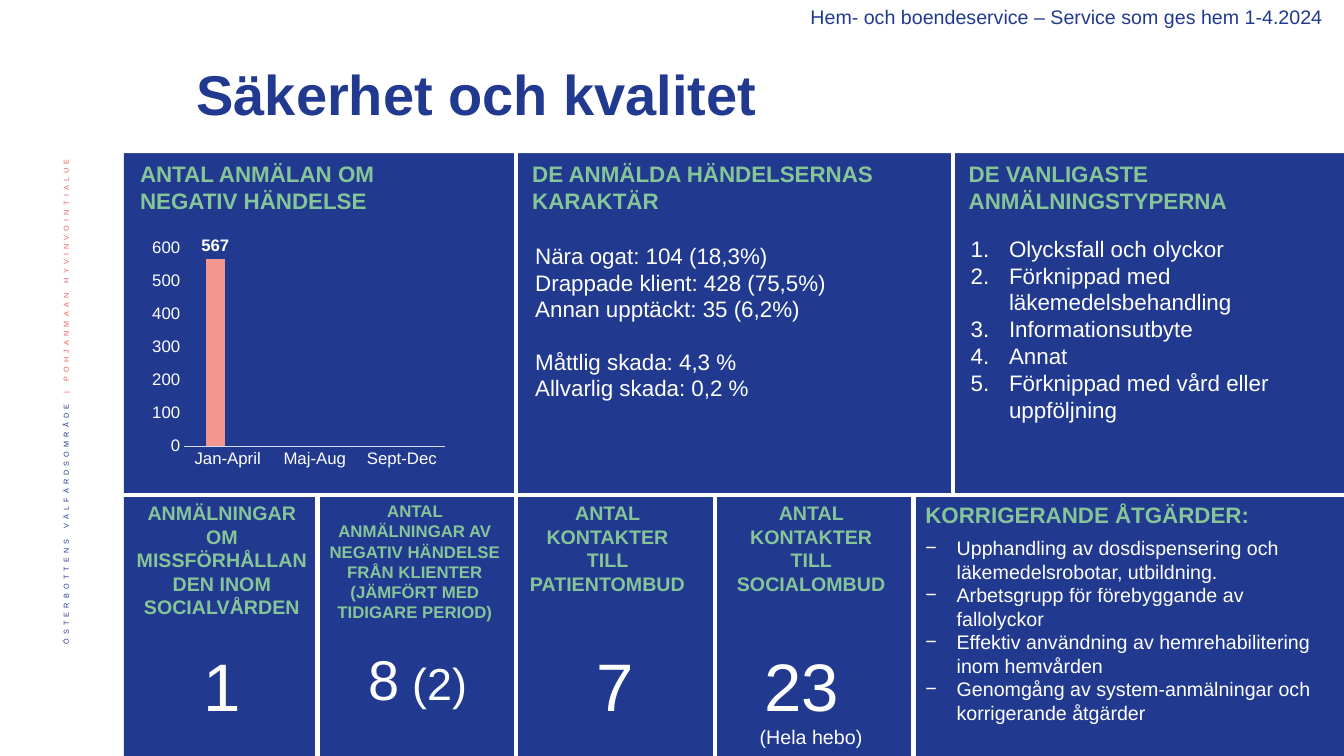
from dataclasses import dataclass

from lxml.etree import SubElement
from pptx import Presentation
from pptx.chart.data import CategoryChartData
from pptx.dml.color import RGBColor
from pptx.enum.chart import XL_CHART_TYPE as ChartType
from pptx.enum.chart import XL_LABEL_POSITION as LabelPosition
from pptx.enum.chart import XL_TICK_MARK as TickMark
from pptx.enum.shapes import MSO_CONNECTOR as Connector
from pptx.enum.shapes import MSO_SHAPE as Shape
from pptx.enum.text import MSO_ANCHOR as Anchor
from pptx.enum.text import MSO_AUTO_SIZE as AutoSize
from pptx.enum.text import PP_ALIGN as Align
from pptx.oxml.ns import qn
from pptx.slide import Slide
from pptx.util import Inches, Pt

BLUE = RGBColor(0x21, 0x3A, 0x8F)
GREEN = RGBColor(0x85, 0xC5, 0x98)
WHITE = RGBColor(0xFF, 0xFF, 0xFF)
CORAL = RGBColor(0xEB, 0x5C, 0x5F)
SALMON = RGBColor(0xF3, 0x96, 0x90)
PALE = RGBColor(0xD6, 0xDD, 0xF6)
WIDTH, HEIGHT = 13.33, 7.5
PANEL_LEFT, DIVIDER = 1.23, 4.91
COLUMNS = [3.15 + 1.97 * index for index in range(4)]


@dataclass(frozen=True)
class Span:
    text: str
    size: float
    color: RGBColor = WHITE
    bold: bool = False


@dataclass(frozen=True)
class Block:
    left: float
    top: float
    width: float
    height: float
    paras: list[list[Span]]
    align: Align = Align.LEFT
    bullet: str = ""
    indent: float = 0
    anchor: Anchor = Anchor.TOP
    spacing: float = 1.0
    vertical: bool = False


@dataclass(frozen=True)
class Rule:
    x1: float
    y1: float
    x2: float
    y2: float


@dataclass(frozen=True)
class Panel:
    left: float
    top: float
    width: float
    height: float
    color: RGBColor


def lines(size: float, *texts: str) -> list[list[Span]]:
    return [[Span(text, size)] for text in texts]


def heading(text: str, size: float = 16) -> list[list[Span]]:
    return [[Span(text, size, GREEN, True)]]


def apply(target, values: dict) -> None:
    for name, value in values.items():
        setattr(target, name, value)


def style(font, size: float, color: RGBColor, bold: bool = False) -> None:
    apply(font, {"name": "Arial", "size": Pt(size), "bold": bold})
    font.color.rgb = color


def add_panel(page: Slide, panel: Panel) -> None:
    shape = page.shapes.add_shape(Shape.RECTANGLE, Inches(panel.left), Inches(panel.top),
                                  Inches(panel.width), Inches(panel.height))
    shape.shadow.inherit = False
    shape.fill.solid()
    shape.fill.fore_color.rgb = panel.color
    shape.line.fill.background()


def add_rule(page: Slide, rule: Rule) -> None:
    line = page.shapes.add_connector(Connector.STRAIGHT, Inches(rule.x1), Inches(rule.y1),
                                     Inches(rule.x2), Inches(rule.y2))
    line.line.color.rgb = WHITE
    line.line.width = Pt(3)
    SubElement(line._element.spPr, qn("a:effectLst"))


def add_bullet(para, bullet: str, indent: float) -> None:
    properties = para._p.get_or_add_pPr()
    properties.set("marL", str(Inches(indent)))
    properties.set("indent", str(-Inches(indent)))
    if bullet == "1.":
        SubElement(properties, qn("a:buAutoNum"), type="arabicPeriod")
    else:
        SubElement(properties, qn("a:buFont"), typeface="Arial")
        SubElement(properties, qn("a:buChar"), char=bullet)


def add_block(page: Slide, block: Block) -> None:
    box = page.shapes.add_textbox(Inches(block.left), Inches(block.top),
                                  Inches(block.width), Inches(block.height))
    frame = box.text_frame
    fixed = block.anchor == Anchor.MIDDLE
    apply(frame, {"word_wrap": True, "vertical_anchor": block.anchor,
                  "auto_size": AutoSize.NONE if fixed else AutoSize.SHAPE_TO_FIT_TEXT})
    if block.vertical:
        frame._txBody.bodyPr.set("vert", "vert270")
    for index, spans in enumerate(block.paras):
        para = frame.add_paragraph() if index else frame.paragraphs[0]
        apply(para, {"alignment": block.align, "line_spacing": block.spacing})
        if block.bullet:
            add_bullet(para, block.bullet, block.indent)
        for span in spans:
            run = para.add_run()
            run.text = span.text
            style(run.font, span.size, span.color, span.bold)
            if block.vertical:
                run.font._element.set("baseline", "30000")
                run.font._element.set("spc", "300")


def add_report_chart(page: Slide) -> None:
    data = CategoryChartData()
    data.categories = ["Jan-April", "Maj-Aug", "Sept-Dec"]
    data.add_series("Series 1", [567, None, None])
    data.add_series("Series 2", [None, None, None])
    chart = page.shapes.add_chart(ChartType.COLUMN_CLUSTERED, Inches(1.34), Inches(2.35),
                                  Inches(3.16), Inches(2.52), data).chart
    apply(chart, {"has_legend": False, "has_title": False})
    style(chart.font, 10, BLUE)
    for axis in (chart.category_axis, chart.value_axis):
        apply(axis, {"major_tick_mark": TickMark.NONE, "minor_tick_mark": TickMark.NONE,
                     "has_major_gridlines": False})
        style(axis.tick_labels.font, 12, WHITE)
    apply(chart.value_axis, {"minimum_scale": 0, "maximum_scale": 600, "major_unit": 100})
    chart.value_axis.format.line.fill.background()
    chart.category_axis.format.line.color.rgb = PALE
    chart.category_axis.format.line.width = Pt(0.75)
    plot = chart.plots[0]
    apply(plot, {"gap_width": 219, "overlap": -27, "vary_by_categories": False})
    for series, color in zip(plot.series, (SALMON, CORAL)):
        series.format.fill.solid()
        series.format.fill.fore_color.rgb = color
        apply(series.data_labels, {"show_value": True, "position": LabelPosition.OUTSIDE_END})
        style(series.data_labels.font, 12, WHITE, True)
    area = chart._chartSpace.chart.plotArea
    for old in area.findall(qn("c:layout")):
        area.remove(old)
    layout = SubElement(area, qn("c:layout"))
    area.insert(0, layout)
    manual = SubElement(layout, qn("c:manualLayout"))
    for name, value in {"layoutTarget": "inner", "xMode": "edge", "yMode": "edge",
                        "x": "0.154", "y": "0.037", "w": "0.82", "h": "0.786"}.items():
        SubElement(manual, qn(f"c:{name}"), val=value)


PANELS = [Panel(PANEL_LEFT, 0, WIDTH - PANEL_LEFT, HEIGHT, BLUE),
          Panel(1.15, 0, WIDTH - 1.15, 1.52, WHITE)]
RULES = [Rule(PANEL_LEFT, DIVIDER, WIDTH, DIVIDER),
         *[Rule(x, DIVIDER, x, HEIGHT) for x in COLUMNS],
         *[Rule(x, 1.42, x, DIVIDER) for x in (COLUMNS[1], 9.45)]]
BLOCKS = [
    Block(0.42, 1.42, 0.52, 5.73, [[Span("ÖSTERBOTTENS VÄLFÄRDSOMRÅDE ", 9, BLUE),
                                    Span("| POHJANMAAN HYVINVOINTIALUE ", 9, CORAL)]],
          Align.RIGHT, anchor=Anchor.MIDDLE, spacing=0.9, vertical=True),
    Block(7.36, 0, 5.86, 0.34,
          [[Span("Hem- och boendeservice – Service som ges hem 1-4.2024", 14, BLUE)]], Align.RIGHT),
    Block(1.85, 0.47, 9.98, 0.99, [[Span("Säkerhet och kvalitet", 40, BLUE, True)]],
          anchor=Anchor.MIDDLE, spacing=0.9),
    Block(1.29, 1.54, 3.11, 0.64, heading("ANTAL ANMÄLAN OM NEGATIV HÄNDELSE")),
    Block(5.18, 1.54, 4.18, 0.64, heading("DE ANMÄLDA HÄNDELSERNAS KARAKTÄR")),
    Block(5.21, 2.35, 3.89, 0.91, lines(16, "Nära ogat: 104 (18,3%)", "Drappade klient: 428 (75,5%)",
                                        "Annan upptäckt: 35 (6,2%)")),
    Block(5.21, 3.4, 3.16, 0.64, lines(16, "Måttlig skada: 4,3 %", "Allvarlig skada: 0,2 %")),
    Block(9.51, 1.54, 3.57, 0.64, heading("DE VANLIGASTE ANMÄLNINGSTYPERNA")),
    Block(9.53, 2.28, 3.8, 1.99,
          lines(16, "Olycksfall och olyckor", "Förknippad med läkemedelsbehandling",
                "Informationsutbyte", "Annat", "Förknippad med vård eller uppföljning"),
          bullet="1.", indent=0.38),
    Block(1.24, 4.92, 1.92, 1.28, heading("ANMÄLNINGAR OM MISSFÖRHÅLLANDEN INOM SOCIALVÅRDEN", 14),
          Align.CENTER),
    Block(1.22, 6.34, 1.97, 0.91, lines(48, "1"), Align.CENTER),
    Block(3.13, 4.92, 1.97, 1.31, heading("ANTAL ANMÄLNINGAR AV NEGATIV HÄNDELSE FRÅN KLIENTER "
                                          "(JÄMFÖRT MED TIDIGARE PERIOD)", 12), Align.CENTER),
    Block(3.16, 6.34, 1.97, 0.77, [[Span("8", 40), Span(" (2)", 32)]], Align.CENTER),
    Block(5.13, 4.92, 1.79, 1.04, heading("ANTAL KONTAKTER TILL PATIENTOMBUD", 14), Align.CENTER),
    Block(5.12, 6.34, 1.97, 0.91, lines(48, "7"), Align.CENTER),
    Block(7.15, 4.92, 1.79, 1.04, heading("ANTAL KONTAKTER TILL SOCIALOMBUD", 14), Align.CENTER),
    Block(7.06, 6.34, 1.97, 1.14, [[Span("23 ", 48)], [Span("(Hela hebo)", 14)]], Align.CENTER),
    Block(9.08, 4.92, 4.03, 0.37, heading("KORRIGERANDE ÅTGÄRDER:")),
    Block(9.08, 5.27, 4.25, 2.22,
          lines(14, "Upphandling av dosdispensering och läkemedelsrobotar, utbildning.",
                "Arbetsgrupp för förebyggande av fallolyckor",
                "Effektiv användning av hemrehabilitering inom hemvården",
                "Genomgång av system-anmälningar och korrigerande åtgärder"),
          bullet="−", indent=0.31),
]


def main() -> None:
    deck = Presentation()
    apply(deck, {"slide_width": Inches(WIDTH), "slide_height": Inches(HEIGHT)})
    page = deck.slides.add_slide(deck.slide_layouts[6])
    for draw, items in ((add_panel, PANELS), (add_rule, RULES), (add_block, BLOCKS)):
        for item in items:
            draw(page, item)
    add_report_chart(page)
    deck.save("out.pptx")


if __name__ == "__main__":
    main()
